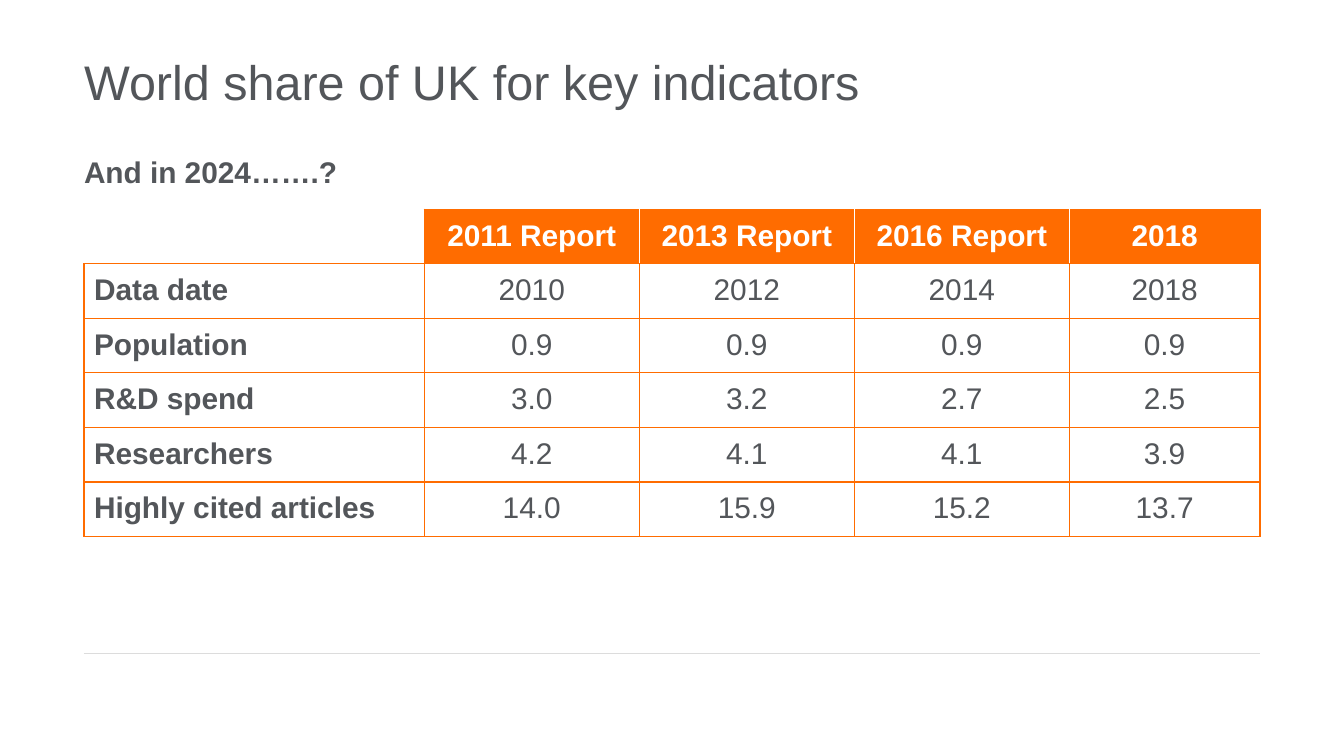
import lxml.etree
import pptx
import pptx.dml.color
import pptx.enum.shapes
import pptx.enum.text
import pptx.oxml.ns
import pptx.util

UNIT = pptx.util.Inches(0.625)  # the slide is a grid of 16 columns by 9 rows
COLORS = {"text": "53565A", "accent": "FF6C00", "white": "FFFFFF", "rule": "DCDCDC"}
ALIGN = pptx.enum.text.PP_ALIGN
ANCHOR = pptx.enum.text.MSO_ANCHOR

COLUMN_WIDTHS = [4.05, 2.56, 2.56, 2.56, 2.27]
ROW_HEIGHT = 0.65
INDICATORS = [
    ["", "2011 Report", "2013 Report", "2016 Report", "2018"],
    ["Data date", "2010", "2012", "2014", "2018"],
    ["Population", "0.9", "0.9", "0.9", "0.9"],
    ["R&D spend", "3.0", "3.2", "2.7", "2.5"],
    ["Researchers", "4.2", "4.1", "4.1", "3.9"],
    ["Highly cited articles", "14.0", "15.9", "15.2", "13.7"],
]


def grid(*lengths):
    return [round(length * UNIT) for length in lengths]


def rgb(name):
    return pptx.dml.color.RGBColor.from_string(COLORS[name])


def set_attributes(target, values):
    for name, value in values.items():
        setattr(target, name, value)


def write(paragraph, text, size, color="text", bold=False, align=ALIGN.LEFT):
    paragraph.alignment = align
    run = paragraph.add_run()
    run.text = text
    set_attributes(run.font, {"name": "Arial", "size": pptx.util.Pt(size), "bold": bold})
    run.font.color.rgb = rgb(color)


def set_frame(frame, right=0, anchor=ANCHOR.TOP):
    set_attributes(frame, {
        "margin_left": 0, "margin_top": 0, "margin_bottom": 0,
        "margin_right": pptx.util.Inches(right),
        "vertical_anchor": anchor, "word_wrap": True,
    })


def add_title(slide, box, text):
    title = slide.shapes.title
    set_attributes(title, dict(zip(("left", "top", "width", "height"), grid(*box))))
    set_frame(title.text_frame, 0.1, ANCHOR.MIDDLE)
    write(title.text_frame.paragraphs[0], text, 26)


def add_question(slide, box, text):
    frame = slide.shapes.add_textbox(*grid(*box)).text_frame
    set_frame(frame)
    write(frame.paragraphs[0], text, 16, bold=True)


def set_borders(cell, colors):
    """Draw the cell's sides; colors maps L, R, T, B to a colour name or None."""
    properties = cell._tc.get_or_add_tcPr()
    for side, color in colors.items():
        line = lxml.etree.SubElement(
            properties, pptx.oxml.ns.qn(f"a:ln{side}"), w=str(pptx.util.Pt(0.75)))
        if color is None:
            lxml.etree.SubElement(line, pptx.oxml.ns.qn("a:noFill"))
            continue
        fill = lxml.etree.SubElement(line, pptx.oxml.ns.qn("a:solidFill"))
        lxml.etree.SubElement(fill, pptx.oxml.ns.qn("a:srgbClr"), val=COLORS[color])


def format_cell(cell, row, column, text):
    header, last = row == 0, len(COLUMN_WIDTHS) - 1
    borders = dict.fromkeys("LRTB", "accent")
    if header and column == 0:
        borders.update(L=None, T=None)
    elif header:
        borders.update(L="accent" if column == 1 else "white",
                       R="accent" if column == last else "white")
    set_borders(cell, borders)
    if not text:
        cell.fill.background()
        cell.margin_top = cell.margin_bottom = 0
        return
    margins = dict.fromkeys(
        ("margin_left", "margin_right", "margin_top", "margin_bottom"), pptx.util.Pt(5.4))
    set_attributes(cell, margins)
    cell.vertical_anchor = ANCHOR.MIDDLE if header else ANCHOR.TOP
    if header:
        cell.fill.solid()
        cell.fill.fore_color.rgb = rgb("accent")
    else:
        cell.fill.background()
    write(cell.text_frame.paragraphs[0], text, 16,
          color="white" if header else "text",
          bold=header or column == 0,
          align=ALIGN.CENTER if column else ALIGN.LEFT)


def add_indicator_table(slide, left, top):
    box = grid(left, top, sum(COLUMN_WIDTHS), ROW_HEIGHT * len(INDICATORS))
    table = slide.shapes.add_table(len(INDICATORS), len(COLUMN_WIDTHS), *box).table
    table.horz_banding = False
    for column, width in zip(table.columns, grid(*COLUMN_WIDTHS)):
        column.width = width
    for row, texts in enumerate(INDICATORS):
        table.rows[row].height = grid(ROW_HEIGHT)[0]
        for column, text in enumerate(texts):
            format_cell(table.cell(row, column), row, column, text)


def add_footer_rule(slide, left, top, width):
    rule = slide.shapes.add_connector(
        pptx.enum.shapes.MSO_CONNECTOR.STRAIGHT, *grid(left, top, left + width, top))
    rule.line.color.rgb = rgb("rule")
    rule.line.width = pptx.util.Pt(1)
    lxml.etree.SubElement(rule._element.spPr, pptx.oxml.ns.qn("a:effectLst"))


def main():
    presentation = pptx.Presentation()
    presentation.slide_width, presentation.slide_height = grid(16, 9)
    slide = presentation.slides.add_slide(presentation.slide_layouts[5])
    add_footer_rule(slide, 1, 7.78, 14)
    add_title(slide, (1, 0.56, 14, 0.82), "World share of UK for key indicators")
    add_indicator_table(slide, 1, 2.49)
    add_question(slide, (1, 1.83, 14, 0.43), "And in 2024…….?")
    presentation.save("out.pptx")


if __name__ == "__main__":
    main()
